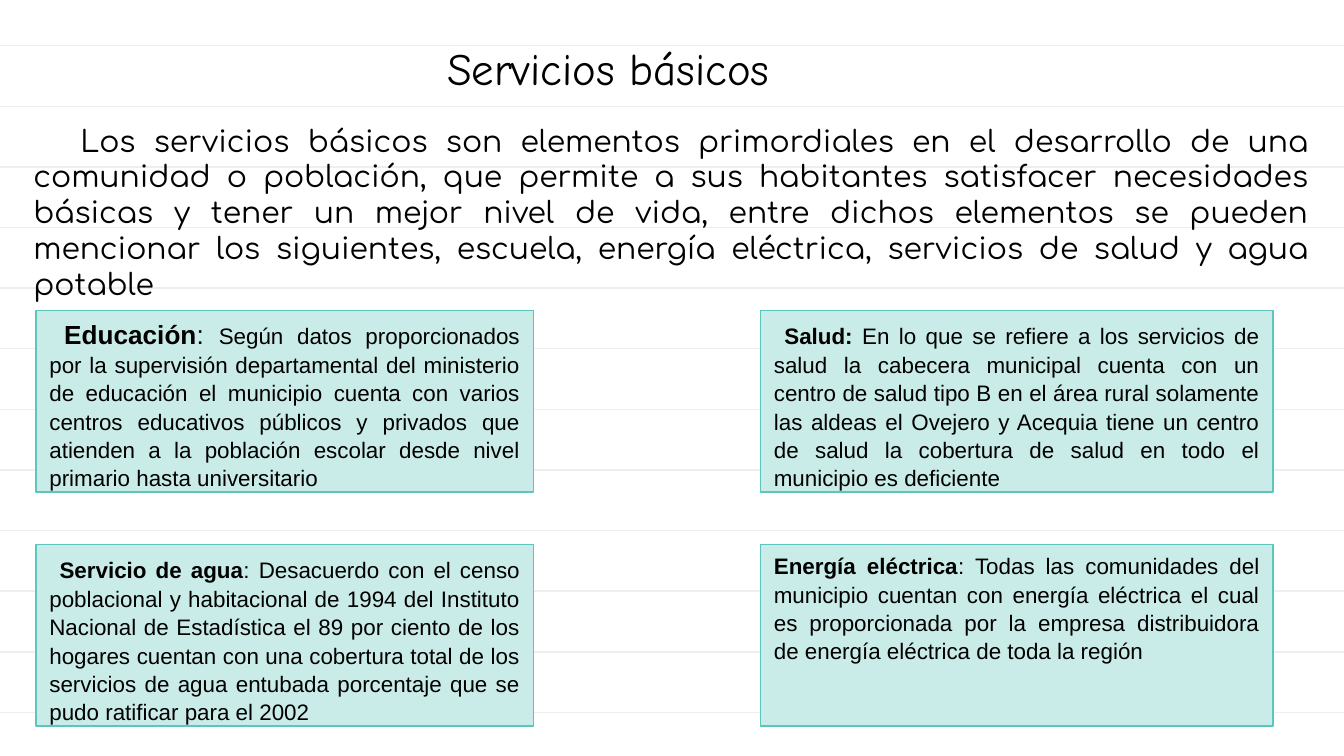
from dataclasses import dataclass
from typing import NamedTuple

from lxml import etree
from pptx import Presentation
from pptx.dml.color import RGBColor
from pptx.enum import shapes, text
from pptx.oxml import ns
from pptx.util import Pt


@dataclass(frozen=True)
class Theme:
    ink: RGBColor = RGBColor(0, 0, 0)
    paper: RGBColor = RGBColor(0xFF, 0xFF, 0xFF)
    rule: RGBColor = RGBColor(0xEE, 0xEE, 0xEE)
    card_fill: RGBColor = RGBColor(0xCA, 0xEC, 0xE9)
    card_edge: RGBColor = RGBColor(0x5E, 0xC5, 0xBC)
    title_font: str = "Comic Neue"
    intro_font: str = "Comfortaa"
    card_font: str = "Arial"
    title_size: float = 24
    intro_size: float = 16
    lead_size: float = 14
    card_size: float = 12
    stroke: float = 0.75


class Box(NamedTuple):
    left: float
    top: float
    width: float
    height: float


class Piece(NamedTuple):
    words: str
    size: float
    bold: bool = False


class Service(NamedTuple):
    column: int
    row: int
    pieces: tuple[Piece, ...]


THEME = Theme()
SLIDE_WIDTH, SLIDE_HEIGHT = 720, 405
RULE_COUNT, RULE_TOP, RULE_GAP = 12, 24.5, 32.47
COLUMNS = ((19.4, 266.4), (407.5, 274.5))  # left, width
ROW_TOP, ROW_GAP, CARD_HEIGHT = 166.3, 125.4, 97.2
INSET = 7.2

INTRO = (
    "Los servicios básicos son elementos primordiales en el desarrollo de una "
    "comunidad o población, que permite a sus habitantes satisfacer necesidades "
    "básicas y tener un mejor nivel de vida, entre dichos elementos se pueden "
    "mencionar los siguientes, escuela, energía eléctrica, servicios de salud y "
    "agua potable"
)

SERVICES = (
    Service(0, 0, (
        Piece(" Educación", THEME.lead_size, True),
        Piece(": ", THEME.lead_size),
        Piece("Según datos proporcionados por la supervisión departamental del "
              "ministerio de educación el municipio cuenta con varios centros "
              "educativos públicos y privados que atienden a la población escolar "
              "desde nivel primario hasta universitario", THEME.card_size),
    )),
    Service(1, 0, (
        Piece(" ", THEME.lead_size, True),
        Piece("Salud: ", THEME.card_size, True),
        Piece("En lo que se refiere a los servicios de salud la cabecera municipal "
              "cuenta con un centro de salud tipo B en el área rural solamente las "
              "aldeas el Ovejero y Acequia tiene un centro de salud la cobertura de "
              "salud en todo el municipio es deficiente", THEME.card_size),
    )),
    Service(0, 1, (
        Piece(" ", THEME.lead_size, True),
        Piece("Servicio de agua", THEME.card_size, True),
        Piece(": Desacuerdo con el censo poblacional y habitacional de 1994 del "
              "Instituto Nacional de Estadística el 89 por ciento de los hogares "
              "cuentan con una cobertura total de los servicios de agua entubada "
              "porcentaje que se pudo ratificar para el 2002", THEME.card_size),
    )),
    Service(1, 1, (
        Piece("Energía eléctrica", THEME.card_size, True),
        Piece(": Todas las comunidades del municipio cuentan con energía eléctrica "
              "el cual es proporcionada por la empresa distribuidora de energía "
              "eléctrica de toda la región", THEME.card_size),
    )),
)


def style_run(run, font: str, size: float, bold: bool = False) -> None:
    run.font.name = font
    run.font.size = Pt(size)
    run.font.bold = bold
    run.font.color.rgb = THEME.ink


def draw_rule(slide, y: float) -> None:
    rule = slide.shapes.add_connector(
        shapes.MSO_CONNECTOR.STRAIGHT, Pt(0), Pt(y), Pt(SLIDE_WIDTH), Pt(y))
    rule.line.color.rgb = THEME.rule
    rule.line.width = Pt(THEME.stroke)
    etree.SubElement(rule._element.spPr, ns.qn("a:effectLst"))


def draw_text(slide, box: Box, words: str, font: str, size: float,
              align: text.PP_ALIGN, anchor: text.MSO_ANCHOR):
    frame = slide.shapes.add_textbox(*map(Pt, box)).text_frame
    frame.word_wrap = True
    frame.vertical_anchor = anchor
    frame.margin_left = frame.margin_right = Pt(INSET)
    frame.margin_top = frame.margin_bottom = Pt(INSET)
    frame.text = words
    paragraph = frame.paragraphs[0]
    paragraph.alignment = align
    style_run(paragraph.runs[0], font, size)
    return paragraph


def draw_service(slide, service: Service) -> None:
    left, width = COLUMNS[service.column]
    box = Box(left, ROW_TOP + service.row * ROW_GAP, width, CARD_HEIGHT)
    card = slide.shapes.add_shape(shapes.MSO_SHAPE.RECTANGLE, *map(Pt, box))
    card.shadow.inherit = False
    card.fill.solid()
    card.fill.fore_color.rgb = THEME.card_fill
    card.line.color.rgb = THEME.card_edge
    card.line.width = Pt(THEME.stroke)
    frame = card.text_frame
    frame.word_wrap = True
    frame.vertical_anchor = text.MSO_ANCHOR.TOP
    paragraph = frame.paragraphs[0]
    paragraph.alignment = text.PP_ALIGN.JUSTIFY
    paragraph.line_spacing = 1.05
    for piece in service.pieces:
        run = paragraph.add_run()
        run.text = piece.words
        style_run(run, THEME.card_font, piece.size, piece.bold)


def main() -> None:
    deck = Presentation()
    deck.slide_width, deck.slide_height = Pt(SLIDE_WIDTH), Pt(SLIDE_HEIGHT)
    slide = deck.slides.add_slide(deck.slide_layouts[6])

    # Ruled paper
    slide.background.fill.solid()
    slide.background.fill.fore_color.rgb = THEME.paper
    for index in range(RULE_COUNT):
        draw_rule(slide, RULE_TOP + index * RULE_GAP)

    # Title and introduction
    draw_text(slide, Box(38.9, 0, 573.8, 57.6), "Servicios básicos",
              THEME.title_font, THEME.title_size,
              text.PP_ALIGN.CENTER, text.MSO_ANCHOR.BOTTOM)
    intro = draw_text(slide, Box(-25.2, 58.3, 733.7, 31), INTRO,
                      THEME.intro_font, THEME.intro_size,
                      text.PP_ALIGN.JUSTIFY, text.MSO_ANCHOR.TOP)
    indents = intro._p.get_or_add_pPr()
    indents.set("marL", str(Pt(36)))
    indents.set("indent", str(Pt(25.2)))

    # Service cards
    for service in SERVICES:
        draw_service(slide, service)

    deck.save("out.pptx")


if __name__ == "__main__":
    main()
